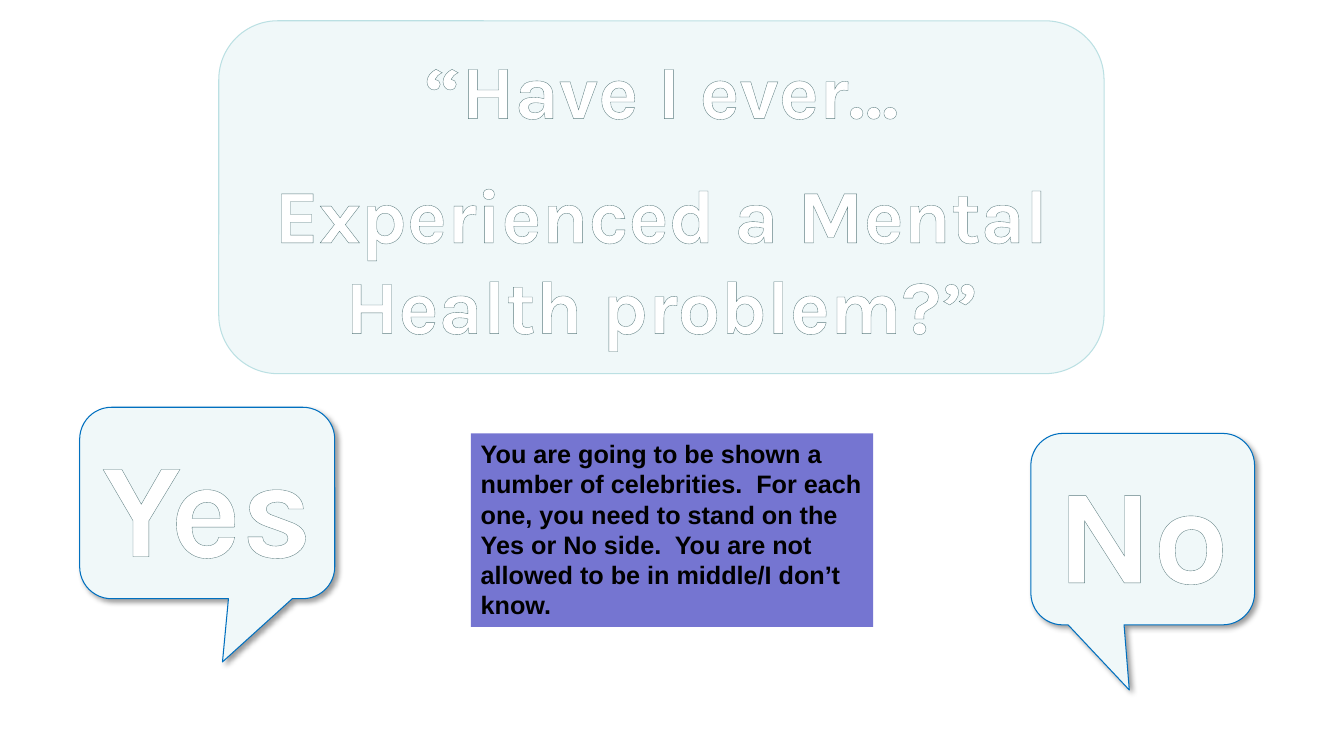
from dataclasses import dataclass

from lxml.etree import SubElement
from pptx import Presentation
from pptx.dml.color import RGBColor
from pptx.enum.shapes import MSO_SHAPE as Shape
from pptx.enum.text import MSO_ANCHOR as Anchor, MSO_AUTO_SIZE as AutoSize, PP_ALIGN as Align
from pptx.oxml import parse_xml
from pptx.oxml.ns import nsdecls, qn
from pptx.util import Inches, Pt


@dataclass(frozen=True)
class Theme:
    pale: str = "F0F8F9"
    mint: str = "BBE0E3"
    blue: str = "0070C0"
    violet: str = "7575D1"
    white: str = "FFFFFF"
    black: str = "000000"
    letter_edge: str = "5F7F82"
    display_font: str = "Karla"
    body_font: str = "Arial"
    question_size: int = 54
    answer_size: int = 96
    body_size: int = 18
    question_gap: int = 24


def write_text(frame, text, font, size, color, outline=None, align=Align.LEFT,
               anchor=Anchor.TOP, wrap=False, gap_after_first=0):
    """Write one paragraph per line of text."""
    frame.word_wrap = wrap
    frame.auto_size = AutoSize.SHAPE_TO_FIT_TEXT
    frame.vertical_anchor = anchor
    for index, line in enumerate(text.split("\n")):
        paragraph = frame.add_paragraph() if index else frame.paragraphs[0]
        paragraph.alignment = align
        if index == 0 and gap_after_first:
            paragraph.space_after = Pt(gap_after_first)
        run = paragraph.add_run()
        run.text = line
        run.font.name, run.font.size, run.font.bold = font, Pt(size), True
        run.font.color.rgb = RGBColor.from_string(color)
        if outline:
            run.font._element.insert(0, parse_xml(
                f'<a:ln {nsdecls("a")} w="{Pt(2.48)}"><a:solidFill>'
                f'<a:srgbClr val="{outline}"/></a:solidFill></a:ln>'))


class SlideBuilder:
    """Places elements on a grid of 100 columns by 100 rows."""

    def __init__(self, presentation, theme):
        self.theme = theme
        self.column = presentation.slide_width / 100
        self.row = presentation.slide_height / 100
        self.slide = presentation.slides.add_slide(presentation.slide_layouts[6])

    def box(self, kind, area, fill, line=None):
        left, top, width, height = area
        shape = self.slide.shapes.add_shape(
            kind, round(left * self.column), round(top * self.row),
            round(width * self.column), round(height * self.row))
        shape.shadow.inherit = False
        shape.fill.solid()
        shape.fill.fore_color.rgb = RGBColor.from_string(fill)
        if line:
            shape.line.color.rgb = RGBColor.from_string(line)
            shape.line.width = Pt(0.75)
        else:
            shape.line.fill.background()
        return shape

    def display_text(self, shape, text, size, **options):
        theme = self.theme
        write_text(shape.text_frame, text, theme.display_font, size, theme.white,
                   outline=theme.letter_edge, align=Align.CENTER, **options)

    def question(self, text, area):
        shape = self.box(Shape.ROUNDED_RECTANGLE, area, self.theme.pale, self.theme.mint)
        self.display_text(shape, text, self.theme.question_size,
                          gap_after_first=self.theme.question_gap)

    def answer(self, text, area, tip):
        shape = self.box(Shape.ROUNDED_RECTANGULAR_CALLOUT, area,
                         self.theme.pale, self.theme.blue)
        shape.adjustments[0], shape.adjustments[1] = tip
        self.drop_shadow(shape)
        self.display_text(shape, text, self.theme.answer_size, anchor=Anchor.MIDDLE)

    def drop_shadow(self, shape):
        effects = shape._element.spPr.find(qn("a:effectLst"))
        shadow = SubElement(effects, qn("a:outerShdw"), blurRad=str(Pt(4)),
                            dist=str(Pt(3)), dir=str(45 * 60000), algn="tl", rotWithShape="0")
        color = SubElement(shadow, qn("a:srgbClr"), val=self.theme.black)
        SubElement(color, qn("a:alpha"), val="40000")

    def instructions(self, text, area):
        shape = self.box(Shape.RECTANGLE, area, self.theme.violet)
        write_text(shape.text_frame, text, self.theme.body_font, self.theme.body_size,
                   self.theme.black, wrap=True)


def main():
    presentation = Presentation()
    presentation.slide_width, presentation.slide_height = Inches(13.33), Inches(7.5)
    builder = SlideBuilder(presentation, Theme())

    # Question
    builder.question("“Have I ever…\nExperienced a Mental\nHealth problem?”",
                     (16.28, 2.75, 65.87, 46.67))

    # Answers
    builder.answer("Yes", (5.93, 53.87, 18.98, 25.33), tip=(0.06, 0.83))
    builder.answer("No", (76.7, 57.33, 16.65, 25.33), tip=(-0.06, 0.84))

    # Instructions
    builder.instructions(
        "You are going to be shown a number of celebrities.  For each one, you need to "
        "stand on the Yes or No side.  You are not allowed to be in middle/I don’t know.",
        (35.03, 57.33, 29.93, 25.6))

    presentation.save("out.pptx")


if __name__ == "__main__":
    main()
